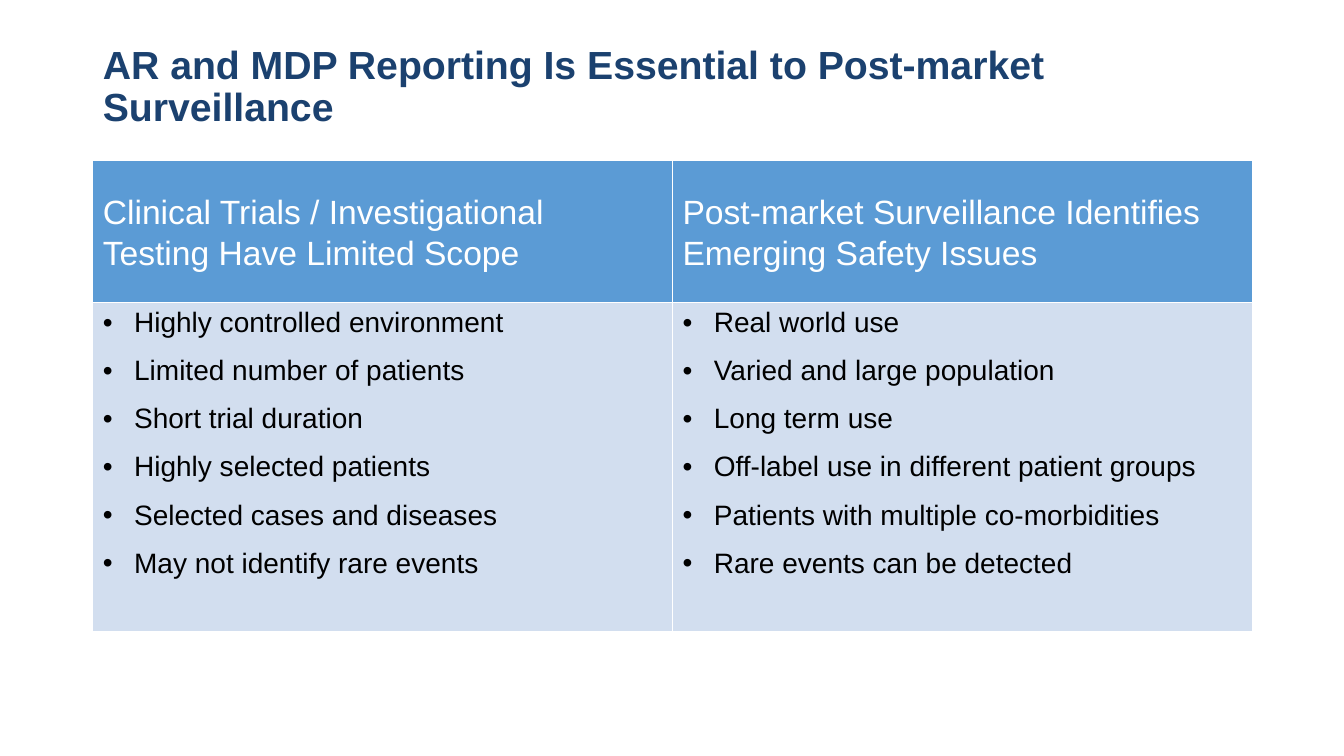
from lxml import etree
from pptx import Presentation
from pptx.dml.color import RGBColor
from pptx.enum.text import MSO_ANCHOR, PP_ALIGN
from pptx.oxml.ns import qn
from pptx.util import Inches, Pt

LEFT = PP_ALIGN.LEFT
TOP, MIDDLE = MSO_ANCHOR.TOP, MSO_ANCHOR.MIDDLE
NAVY, BLUE, PALE, WHITE, BLACK = "1B416F", "5B9BD5", "D2DEEF", "FFFFFF", "000000"

COLUMNS = [
    ("Clinical Trials / Investigational\nTesting Have Limited Scope", [
        "Highly controlled environment",
        "Limited number of patients",
        "Short trial duration",
        "Highly selected patients",
        "Selected cases and diseases",
        "May not identify rare events",
    ]),
    ("Post-market Surveillance Identifies\nEmerging Safety Issues", [
        "Real world use",
        "Varied and large population",
        "Long term use",
        "Off-label use in different patient groups",
        "Patients with multiple co-morbidities",
        "Rare events can be detected",
    ]),
]


def write(tf, lines, size, color, bold=False, spacing=1.0, gap=0, bullet=False):
    for i, line in enumerate(lines):
        p = tf.add_paragraph() if i else tf.paragraphs[0]
        p.text = line
        p.alignment = LEFT
        p.line_spacing = spacing
        p.space_before = p.space_after = Pt(gap)
        for r in p.runs:
            r.font.name = "Arial"
            r.font.size = Pt(size)
            r.font.bold = bold
            r.font.color.rgb = RGBColor.from_string(color)
        if bullet:
            pPr = p._p.get_or_add_pPr()
            pPr.set("marL", str(Inches(0.31)))
            pPr.set("indent", str(-Inches(0.31)))
            etree.SubElement(pPr, qn("a:buFont"), typeface="Arial")
            etree.SubElement(pPr, qn("a:buChar"), char="•")


def style_cell(cell, fill, anchor):
    cell.vertical_anchor = anchor
    tcPr = cell._tc.get_or_add_tcPr()
    for side in ("a:lnL", "a:lnR", "a:lnT", "a:lnB"):
        ln = etree.SubElement(tcPr, qn(side), w=str(Pt(1)))
        line_fill = etree.SubElement(ln, qn("a:solidFill"))
        etree.SubElement(line_fill, qn("a:srgbClr"), val=WHITE)
    cell.fill.solid()
    cell.fill.fore_color.rgb = RGBColor.from_string(fill)


prs = Presentation()
prs.slide_width = Inches(13.33)
prs.slide_height = Inches(7.5)
slide = prs.slides.add_slide(prs.slide_layouts[5])

title = slide.shapes.title
title.left, title.top = Inches(0.92), Inches(0.4)
title.width, title.height = Inches(11.5), Inches(1.45)
tf = title.text_frame
tf.word_wrap = True
tf.vertical_anchor = TOP
write(tf, ["AR and MDP Reporting Is Essential to Post-market Surveillance"],
      28, NAVY, bold=True, spacing=0.9)

table = slide.shapes.add_table(2, len(COLUMNS), Inches(0.92), Inches(1.59),
                               Inches(11.5), Inches(4.68)).table
table.rows[0].height = Inches(1.41)
table.rows[1].height = Inches(3.27)

for col, (heading, points) in enumerate(COLUMNS):
    head, body = table.cell(0, col), table.cell(1, col)
    style_cell(head, BLUE, MIDDLE)
    write(head.text_frame, [heading], 24, WHITE, spacing=1.1, gap=6)
    style_cell(body, PALE, TOP)
    write(body.text_frame, points, 20, BLACK, gap=6, bullet=True)

prs.save("out.pptx")
